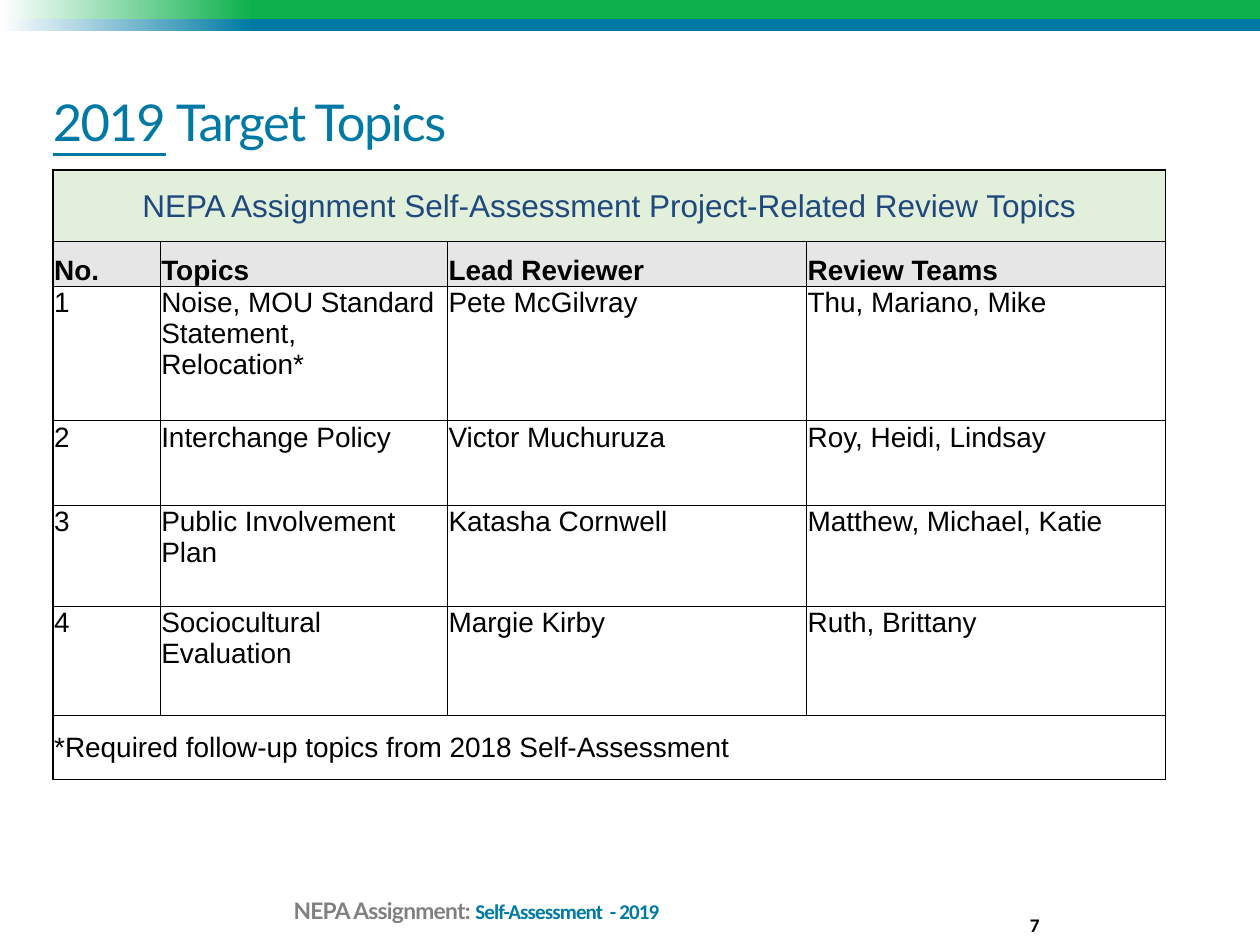
from lxml.etree import SubElement
from pptx import Presentation
from pptx.dml.color import RGBColor
from pptx.enum.text import MSO_ANCHOR as Anchor, PP_ALIGN as Align
from pptx.enum.shapes import MSO_SHAPE as Shape
from pptx.oxml.ns import qn
from pptx.util import Inches, Pt

COLORS = {
    "white": "FFFFFF", "black": "000000", "green": "0DB14B", "blue": "007AA4",
    "footer_blue": "007BA2", "gray": "808080", "navy": "1F497D",
    "pale_green": "E2EFDA", "pale_gray": "E7E6E6",
}

BANDS = [(0, 0.15, "green"), (0.15, 0.1, "blue")]  # top, height, colour

TITLE = [
    ("2019", dict(font="Lato", size=29, color="blue", spacing=-0.9, underline=True)),
    (" Target Topics", dict(font="Lato", size=29, color="blue", spacing=-0.9)),
]
FOOTER = [
    ("NEPA Assignment: ", dict(font="Lato", size=13, color="gray", spacing=-0.4, bold=True)),
    ("Self-Assessment  - 2019",
     dict(font="Calibri", size=12, color="footer_blue", spacing=-0.5, bold=True)),
]
PAGE_NUMBER = [("7", dict(font="Calibri", size=11, color="black", bold=True))]

TABLE_TITLE = "NEPA Assignment Self-Assessment Project-Related Review Topics"
HEADINGS = ("No.", "Topics", "Lead Reviewer", "Review Teams")
REVIEWS = [
    ("1", "Noise, MOU Standard Statement, Relocation*", "Pete McGilvray", "Thu, Mariano, Mike"),
    ("2", "Interchange Policy", "Victor Muchuruza", "Roy, Heidi, Lindsay"),
    ("3", "Public Involvement Plan", "Katasha Cornwell", "Matthew, Michael, Katie"),
    ("4", "Sociocultural Evaluation", "Margie Kirby", "Ruth, Brittany"),
]
FOOTNOTE = "*Required follow-up topics from 2018 Self-Assessment"
COLUMN_WIDTHS = (0.85, 2.28, 2.85, 2.85)
ROW_HEIGHTS = (0.57, 0.35, 1.07, 0.67, 0.8, 0.87, 0.51)


def rgb(name):
    return RGBColor.from_string(COLORS[name])


def style_run(run, font, size, color, spacing=0, bold=False, underline=False):
    run.font.name = font
    run.font.size = Pt(size)
    run.font.bold = bold
    run.font.underline = underline
    run.font.color.rgb = rgb(color)
    if spacing:
        run._r.get_or_add_rPr().set("spc", str(round(spacing * 100)))


def add_band(slide, top, height, color):
    """Draw a full-width bar that fades in from white at the left."""
    band = slide.shapes.add_shape(
        Shape.RECTANGLE, 0, Inches(top), Inches(10), Inches(height))
    band.shadow.inherit = False
    band.line.fill.background()
    band.fill.gradient()
    band.fill.gradient_angle = 0
    for stop, position, name in zip(band.fill.gradient_stops, (0, 0.2), ("white", color)):
        stop.position = position
        stop.color.rgb = rgb(name)


def add_text(slide, box, runs, anchor=Anchor.BOTTOM):
    frame = slide.shapes.add_textbox(*map(Inches, box)).text_frame
    frame.word_wrap = True
    frame.vertical_anchor = anchor
    frame.margin_left = frame.margin_top = frame.margin_right = frame.margin_bottom = 0
    paragraph = frame.paragraphs[0]
    for text, style in runs:
        run = paragraph.add_run()
        run.text = text
        style_run(run, **style)
    return paragraph


def set_borders(cell, widths):
    properties = cell._tc.get_or_add_tcPr()
    for side, width in widths.items():
        line = SubElement(properties, qn(f"a:ln{side}"), w=str(Pt(width)))
        fill = SubElement(line, qn("a:solidFill"))
        SubElement(fill, qn("a:srgbClr"), val=COLORS["black"])


def fill_cell(cell, text, anchor=Anchor.TOP, align=Align.LEFT, fill=None,
              size=16, color="black", bold=False):
    cell.margin_left = cell.margin_top = cell.margin_right = Inches(0.01)
    cell.margin_bottom = 0
    cell.vertical_anchor = anchor
    if fill:
        cell.fill.solid()
        cell.fill.fore_color.rgb = rgb(fill)
    else:
        cell.fill.background()
    if text:
        paragraph = cell.text_frame.paragraphs[0]
        paragraph.text = text
        paragraph.alignment = align
        style_run(paragraph.runs[0], "Arial", size, color, bold=bold)


def add_review_table(slide):
    rows = [(TABLE_TITLE, "", "", ""), HEADINGS, *REVIEWS, (FOOTNOTE, "", "", "")]
    last_row, last_column = len(rows) - 1, len(HEADINGS) - 1
    row_styles = {
        0: dict(anchor=Anchor.MIDDLE, align=Align.CENTER, fill="pale_green",
                size=18, color="navy"),
        1: dict(anchor=Anchor.BOTTOM, fill="pale_gray", bold=True),
        last_row: dict(anchor=Anchor.MIDDLE),
    }
    table = slide.shapes.add_table(
        len(rows), len(HEADINGS), Inches(0.42), Inches(1.35),
        Inches(sum(COLUMN_WIDTHS)), Inches(sum(ROW_HEIGHTS))).table
    table.first_row = table.horz_banding = False
    for column, width in zip(table.columns, COLUMN_WIDTHS):
        column.width = Inches(width)
    for row, height in zip(table.rows, ROW_HEIGHTS):
        row.height = Inches(height)
    for r, texts in enumerate(rows):
        for c, text in enumerate(texts):
            cell = table.cell(r, c)
            set_borders(cell, {
                "L": 1 if c == 0 else 0.5,
                "R": 1 if c == last_column else 0.5,
                "T": 1 if r == 0 else 0.5,
                "B": 0.5,
            })
            fill_cell(cell, text, **row_styles.get(r, {}))
    for r in (0, last_row):
        table.cell(r, 0).merge(table.cell(r, last_column))


def main():
    deck = Presentation()
    deck.slide_width, deck.slide_height = Inches(10), Inches(7.5)
    slide = deck.slides.add_slide(deck.slide_layouts[6])

    for band in BANDS:
        add_band(slide, *band)
    footer = add_text(slide, (2.33, 6.86, 5.41, 0.47), FOOTER)
    footer.line_spacing = 0.8
    footer.space_after = Pt(12)
    add_text(slide, (0.42, 0.3, 8.83, 0.9), TITLE).line_spacing = 0.8
    add_text(slide, (7.67, 7.03, 0.58, 0.4), PAGE_NUMBER).alignment = Align.RIGHT
    add_review_table(slide)

    deck.save("out.pptx")


if __name__ == "__main__":
    main()
